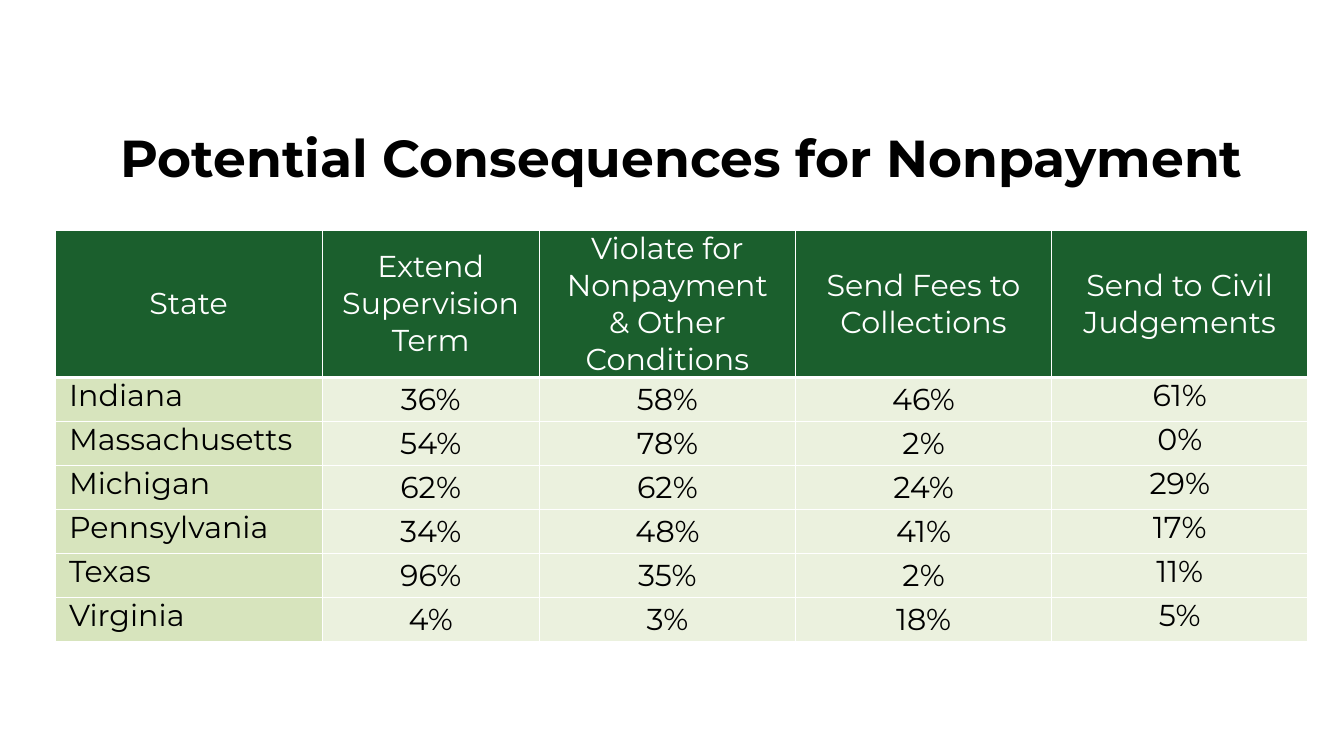
from lxml import etree
from pptx import Presentation
from pptx.dml.color import RGBColor
from pptx.enum.text import MSO_ANCHOR, PP_ALIGN
from pptx.oxml.ns import qn
from pptx.util import Pt

MID, TOP = MSO_ANCHOR.MIDDLE, MSO_ANCHOR.TOP
LEFT, CENTER = PP_ALIGN.LEFT, PP_ALIGN.CENTER

TITLE = "Potential Consequences for Nonpayment"
ROWS = [
    ("State", "Extend Supervision Term", "Violate for Nonpayment & Other Conditions",
     "Send Fees to Collections", "Send to Civil Judgements"),
    ("Indiana", "36%", "58%", "46%", "61%"),
    ("Massachusetts", "54%", "78%", "2%", "0%"),
    ("Michigan", "62%", "62%", "24%", "29%"),
    ("Pennsylvania", "34%", "48%", "41%", "17%"),
    ("Texas", "96%", "35%", "2%", "11%"),
    ("Virginia", "4%", "3%", "18%", "5%"),
]
WIDTHS = [267, 217, 256, 256, 256]
HEAD, BODY = 147, 44
FONT = "Montserrat"
WHITE, BLACK = "FFFFFF", "000000"
GREEN, LIME, PALE = "1B5F2D", "D7E4BD", "EBF1DE"


def px(n):
    return round(n * 914400 / 94.4)


def color(code):
    return RGBColor.from_string(code)


def style(par, size, code, align, bold=False):
    par.alignment = align
    for run in par.runs:
        font = run.font
        font.name, font.size, font.bold = FONT, Pt(size), bold
        font.color.rgb = color(code)


def edge(cell, foot):
    props = cell._tc.get_or_add_tcPr()
    for i, side in enumerate(("lnL", "lnR", "lnT", "lnB")):
        line = etree.Element(qn("a:" + side), w=str(Pt(foot if side == "lnB" else 1)))
        fill = etree.SubElement(line, qn("a:solidFill"))
        etree.SubElement(fill, qn("a:srgbClr"), val=WHITE)
        props.insert(i, line)


def dress(cell, text, r, c):
    head, name = r == 0, c == 0
    cell.text_frame.text = text
    cell.margin_left = cell.margin_right = px(14)
    cell.margin_top = cell.margin_bottom = 0
    cell.vertical_anchor = MID if head or 0 < c < len(WIDTHS) - 1 else TOP
    cell.fill.solid()
    cell.fill.fore_color.rgb = color(GREEN if head else LIME if name else PALE)
    style(cell.text_frame.paragraphs[0], 23, WHITE if head else BLACK,
          LEFT if name and not head else CENTER)
    edge(cell, 3 if head else 1)


def main():
    deck = Presentation()
    deck.slide_width, deck.slide_height = px(1343), px(755)
    slide = deck.slides.add_slide(deck.slide_layouts[6])

    frame = slide.shapes.add_textbox(px(102), px(84), px(1158), px(146)).text_frame
    frame.word_wrap = True
    frame.vertical_anchor = MID
    frame.text = TITLE
    style(frame.paragraphs[0], 39.6, BLACK, CENTER, True)

    high = HEAD + BODY * (len(ROWS) - 1)
    table = slide.shapes.add_table(len(ROWS), len(WIDTHS), px(55), px(230),
                                   px(sum(WIDTHS)), px(high)).table
    for col, wide in zip(table.columns, WIDTHS):
        col.width = px(wide)
    for r, row in enumerate(ROWS):
        table.rows[r].height = px(BODY if r else HEAD)
        for c, text in enumerate(row):
            dress(table.cell(r, c), text, r, c)

    deck.save("out.pptx")


if __name__ == "__main__":
    main()
